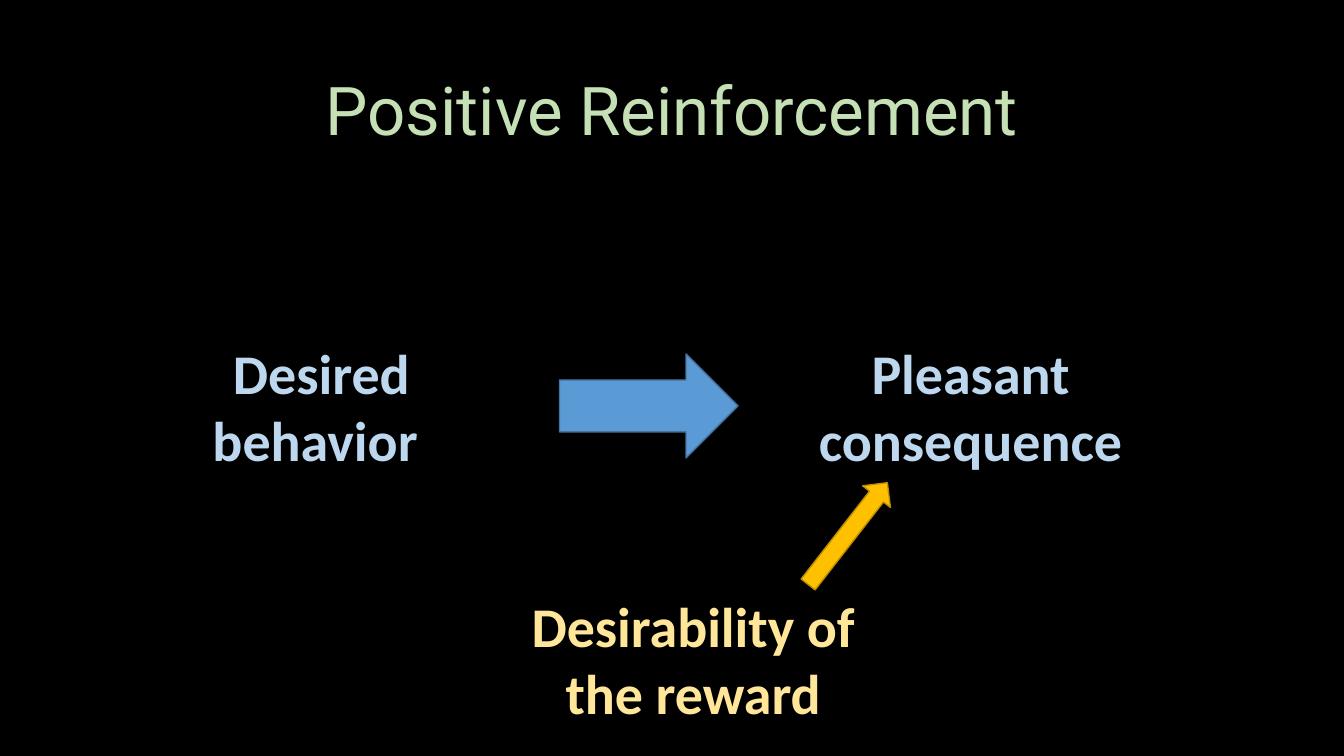
"""Build a slide showing how a reward's desirability supports positive reinforcement."""
from dataclasses import dataclass

from pptx import Presentation
from pptx.dml.color import RGBColor
from pptx.enum.shapes import MSO_SHAPE
from pptx.enum.text import MSO_ANCHOR, MSO_AUTO_SIZE, PP_ALIGN
from pptx.slide import Slide
from pptx.text.text import TextFrame
from pptx.util import Cm, Pt

BLACK = RGBColor(0x00, 0x00, 0x00)
PALE_GREEN = RGBColor(0xC5, 0xE0, 0xB4)
PALE_BLUE = RGBColor(0xBD, 0xD7, 0xEE)
PALE_GOLD = RGBColor(0xFF, 0xE6, 0x99)
BLUE = RGBColor(0x5B, 0x9B, 0xD5)
DARK_BLUE = RGBColor(0x43, 0x73, 0x9E)
GOLD = RGBColor(0xFF, 0xC0, 0x00)
DARK_GOLD = RGBColor(0xBD, 0x8E, 0x00)

LABEL_WIDTH = 8.94
LABEL_HEIGHT = 3.68


@dataclass
class Label:
    text: str
    left: float
    top: float
    color: RGBColor


@dataclass
class Arrow:
    left: float
    top: float
    width: float
    height: float
    fill: RGBColor
    line: RGBColor
    rotation: float = 0


LABELS = [
    Label("Desired behavior ", 3.63, 8.38, PALE_BLUE),
    Label("Pleasant consequence", 19.99, 8.38, PALE_BLUE),
    Label("Desirability of the reward", 13.0, 14.76, PALE_GOLD),
]
ARROWS = [
    Arrow(14.1, 8.92, 4.5, 2.62, BLUE, DARK_BLUE),
    Arrow(19.74, 13.0, 3.25, 0.89, GOLD, DARK_GOLD, 307.9),
]


def write_text(tf: TextFrame, text: str, font: str, size: int, color: RGBColor, bold: bool) -> None:
    tf.word_wrap = True
    tf.vertical_anchor = MSO_ANCHOR.MIDDLE
    p = tf.paragraphs[0]
    p.text = text
    p.alignment = PP_ALIGN.CENTER
    p.font.name = font
    p.font.size = Pt(size)
    p.font.bold = bold
    p.font.color.rgb = color


def add_title(s: Slide, text: str) -> None:
    sp = s.shapes.title
    sp.left, sp.top, sp.width, sp.height = Cm(2.33), Cm(1.02), Cm(29.21), Cm(3.68)
    tf = sp.text_frame
    tf.auto_size = MSO_AUTO_SIZE.NONE
    write_text(tf, text, "Roboto", 48, PALE_GREEN, False)
    tf.paragraphs[0].line_spacing = 0.9


def add_label(s: Slide, label: Label) -> None:
    sp = s.shapes.add_textbox(Cm(label.left), Cm(label.top), Cm(LABEL_WIDTH), Cm(LABEL_HEIGHT))
    tf = sp.text_frame
    tf.auto_size = MSO_AUTO_SIZE.SHAPE_TO_FIT_TEXT
    write_text(tf, label.text, "Calibri", 40, label.color, True)


def add_arrow(s: Slide, arrow: Arrow) -> None:
    sp = s.shapes.add_shape(MSO_SHAPE.RIGHT_ARROW, Cm(arrow.left), Cm(arrow.top),
                            Cm(arrow.width), Cm(arrow.height))
    sp.rotation = arrow.rotation
    sp.shadow.inherit = False
    sp.fill.solid()
    sp.fill.fore_color.rgb = arrow.fill
    sp.line.color.rgb = arrow.line
    sp.line.width = Pt(1)


def main() -> None:
    prs = Presentation()
    prs.slide_width, prs.slide_height = Cm(33.87), Cm(19.05)
    s = prs.slides.add_slide(prs.slide_layouts.get_by_name("Title Only"))
    s.background.fill.solid()
    s.background.fill.fore_color.rgb = BLACK
    add_title(s, "Positive Reinforcement")
    for label in LABELS:
        add_label(s, label)
    for arrow in ARROWS:
        add_arrow(s, arrow)
    prs.save("out.pptx")


if __name__ == "__main__":
    main()
